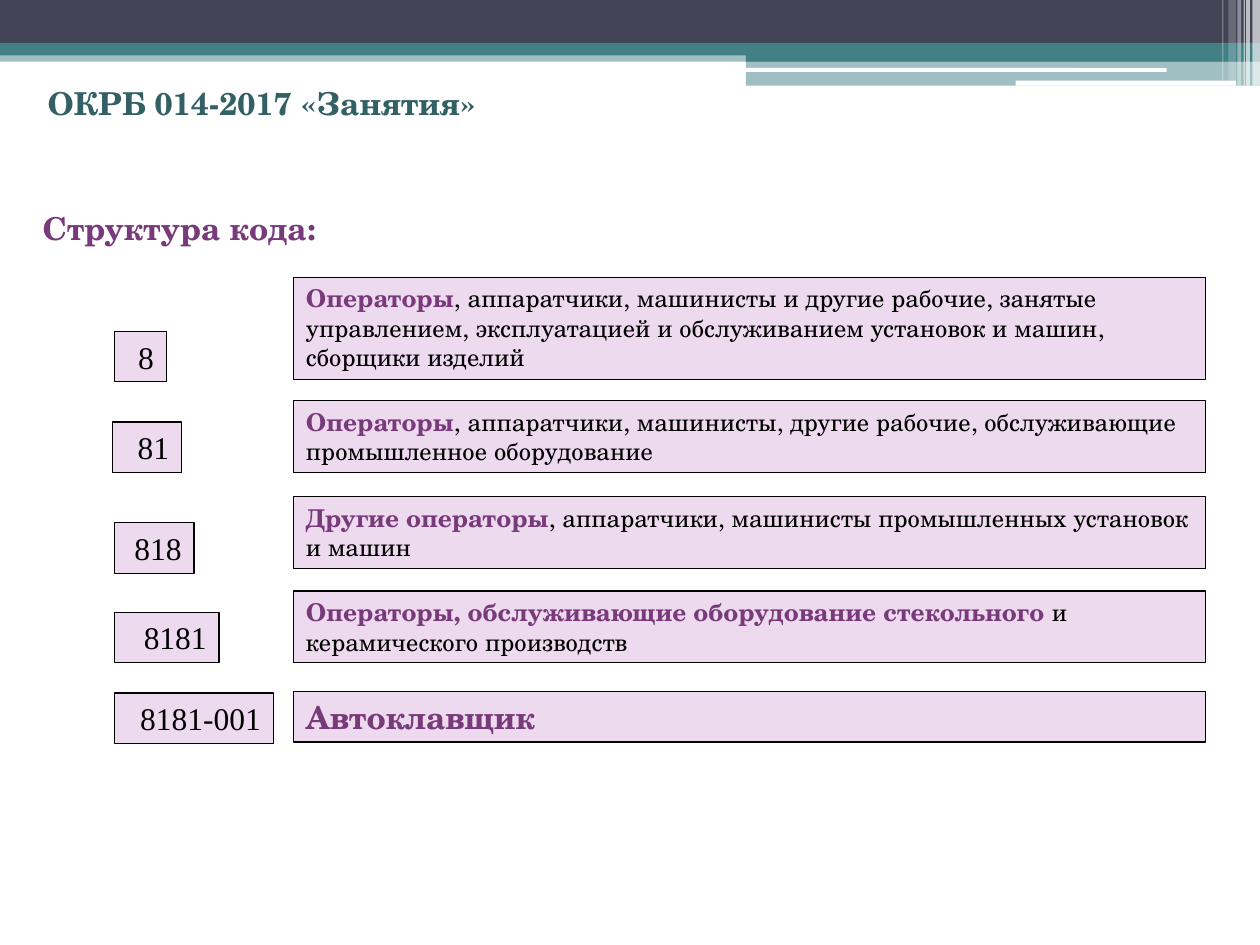
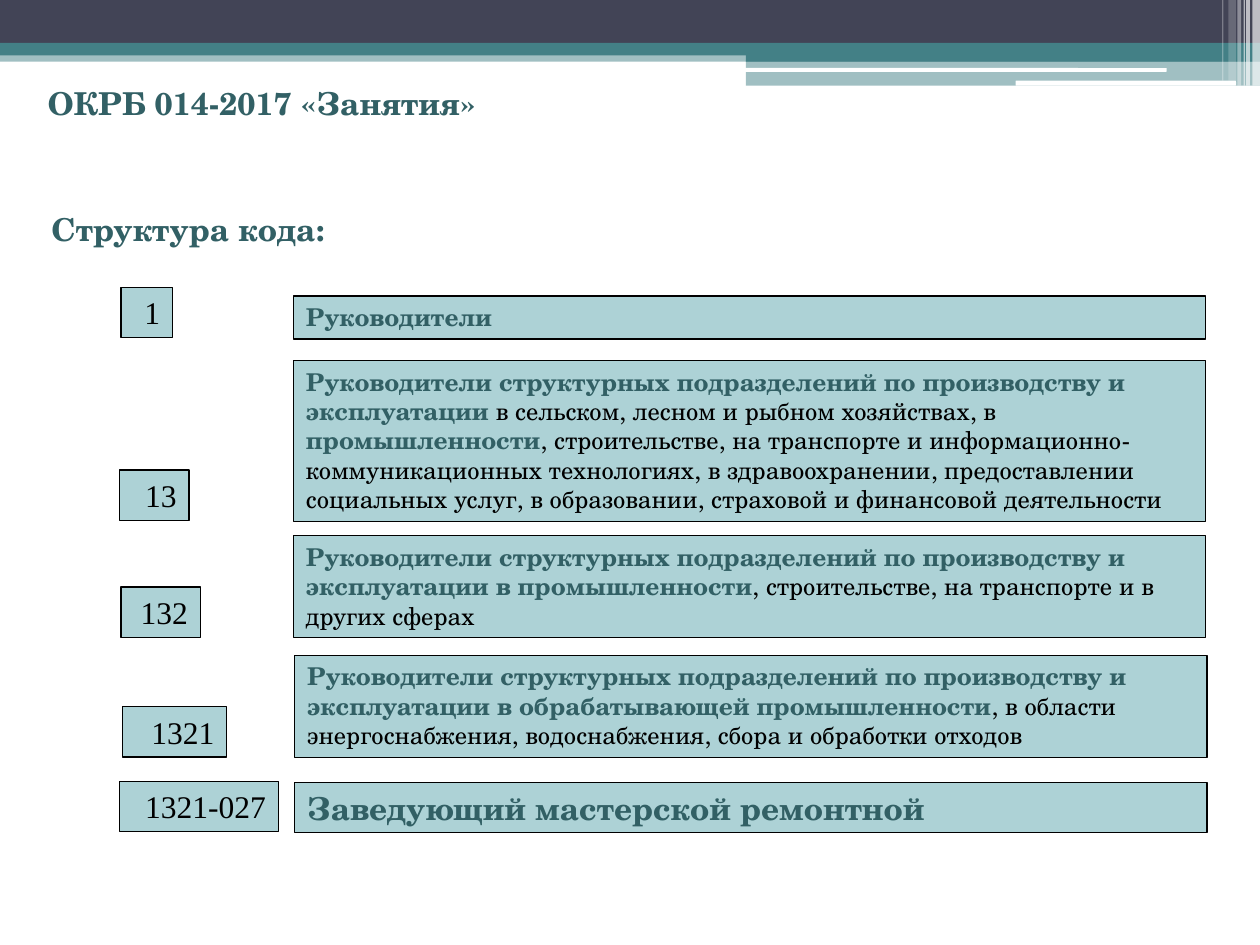
from dataclasses import dataclass
from typing import NamedTuple, Optional

import lxml.etree
import pptx
import pptx.dml.color
import pptx.enum.shapes
import pptx.enum.text
import pptx.oxml.ns
import pptx.util

Inches = pptx.util.Inches
Pt = pptx.util.Pt
FORM = pptx.enum.shapes.MSO_SHAPE
ALIGN = pptx.enum.text.PP_ALIGN

COLORS = {
    "dark": "424456",
    "teal": "438086",
    "white": "FFFFFF",
    "black": "000000",
    "deep": "326065",
    "aqua": "ADD2D6",
    "plum": "783A7A",
    "pink": "EDDAEE",
}
SERIF = "TeX Gyre Schola"
ROMAN = "Times New Roman"
FRAME = {
    "word_wrap": True,
    "auto_size": pptx.enum.text.MSO_AUTO_SIZE.NONE,
    "vertical_anchor": pptx.enum.text.MSO_ANCHOR.TOP,
    "margin_left": Inches(0.1),
    "margin_right": Inches(0.1),
    "margin_top": Inches(0.05),
    "margin_bottom": Inches(0.05),
}
TITLE = "*ОКРБ 014-2017 «Занятия»*"
HEAD = "*Структура кода:*"
TALL = 0.4
WIDE = 7.24
CODE_WIDTHS = {1: 0.41, 2: 0.55, 3: 0.63, 4: 0.83, 8: 1.26}


class Box(NamedTuple):
    left: float
    top: float
    width: float
    height: float


@dataclass
class Band:
    box: Box
    color: str
    alpha: int = 100
    form: int = FORM.RECTANGLE


@dataclass
class Style:
    """Text look; the accent colour marks bold words."""
    accent: str
    size: int = 14
    font: str = SERIF
    align: int = ALIGN.LEFT


@dataclass
class Level:
    """One step of the code: its digits and its meaning, bold between asterisks."""
    code: str
    code_left: float
    code_top: float
    text: str
    top: float
    height: float
    left: float = 2.33
    size: int = 14


@dataclass
class Page:
    accent: str
    fill: str
    head: Box
    levels: list[Level]


def stripe(left: float, width: float, height: float, alpha: int) -> Band:
    return Band(Box(left, 0, width, height), "white", alpha)


BANDS = [
    Band(Box(0, 0.4, 10, 0.09), "teal", 50),
    Band(Box(0, 0, 10, 0.34), "dark"),
    Band(Box(0, 0.34, 10, 0.1), "teal"),
    Band(Box(5.92, 0.39, 4.08, 0.1), "teal"),
    Band(Box(5.92, 0.48, 4.08, 0.2), "teal", 50),
    Band(Box(5.91, 0.54, 3.35, 0.03), "white", form=FORM.ROUNDED_RECTANGLE),
    Band(Box(8.06, 0.64, 1.75, 0.04), "white", form=FORM.ROUNDED_RECTANGLE),
    stripe(9.94, 0.06, 0.68, 65),
    stripe(9.89, 0.03, 0.68, 65),
    stripe(9.87, 0.01, 0.68, 60),
    stripe(9.82, 0.03, 0.68, 40),
    stripe(9.75, 0.06, 0.64, 20),
    stripe(9.7, 0.01, 0.64, 30),
]

PAGES = [
    Page("plum", "pink", Box(0.24, 1.61, 2.6, TALL), [
        Level("8", 0.91, 2.63,
              "*Операторы*, аппаратчики, машинисты и другие рабочие, занятые "
              "управлением, эксплуатацией и обслуживанием установок и машин, "
              "сборщики изделий", 2.2, 0.81),
        Level("81", 0.89, 3.35,
              "*Операторы*, аппаратчики, машинисты, другие рабочие, "
              "обслуживающие промышленное оборудование", 3.18, 0.57),
        Level("818", 0.91, 4.15,
              "*Другие операторы*, аппаратчики, машинисты промышленных "
              "установок и машин", 3.94, 0.57),
        Level("8181", 0.91, 4.86,
              "*Операторы, обслуживающие оборудование стекольного *"
              "и керамического производств", 4.69, 0.57),
        Level("8181-001", 0.91, 5.5, "*Автоклавщик*", 5.49, TALL, size=18),
    ]),
    Page("deep", "aqua", Box(0.31, 1.62, 2.6, TALL), [
        Level("1", 0.96, 2.28, "*Руководители*", 2.35, 0.34),
        Level("13", 0.95, 3.73,
              "*Руководители структурных подразделений по производству и "
              "эксплуатации *в сельском, лесном и рыбном хозяйствах, в "
              "*промышленности*, строительстве, на транспорте и "
              "информационно-коммуникационных технологиях, в здравоохранении, "
              "предоставлении социальных услуг, в образовании, страховой и "
              "финансовой деятельности", 2.86, 1.28),
        Level("132", 0.96, 4.66,
              "*Руководители структурных подразделений по производству и "
              "эксплуатации в промышленности*, строительстве, на транспорте "
              "и в других сферах", 4.25, 0.81),
        Level("1321", 0.97, 5.61,
              "*Руководители структурных подразделений по производству и "
              "эксплуатации в обрабатывающей промышленности*, в области "
              "энергоснабжения, водоснабжения, сбора и обработки отходов",
              5.2, 0.81, left=2.34),
        Level("1321-027", 0.95, 6.2, "*Заведующий мастерской ремонтной*",
              6.21, TALL, left=2.34, size=18),
    ]),
]


def rgb(name: str) -> pptx.dml.color.RGBColor:
    return pptx.dml.color.RGBColor.from_string(COLORS[name])


def place(box: Box) -> list[int]:
    return [Inches(side) for side in box]


def write(shape, text: str, style: Style) -> None:
    """Fill the shape with text; parts between asterisks are bold accents."""
    frame = shape.text_frame
    for name, value in FRAME.items():
        setattr(frame, name, value)
    line = frame.paragraphs[0]
    line.alignment = style.align
    for index, part in enumerate(text.split("*")):
        if not part:
            continue
        bold = index % 2 == 1
        run = line.add_run()
        run.text = part
        looks = {"name": style.font, "size": Pt(style.size), "bold": bold}
        for name, value in looks.items():
            setattr(run.font, name, value)
        run.font.color.rgb = rgb(style.accent if bold else "black")


def add_form(slide, box: Box, fill: str, edge: Optional[str] = None,
             form: int = FORM.RECTANGLE):
    shape = slide.shapes.add_shape(form, *place(box))
    shape.shadow.inherit = False
    shape.fill.solid()
    shape.fill.fore_color.rgb = rgb(fill)
    if edge:
        shape.line.color.rgb = rgb(edge)
        shape.line.width = Pt(0.75)
    else:
        shape.line.fill.background()
    return shape


def add_band(slide, band: Band) -> None:
    shape = add_form(slide, band.box, band.color, form=band.form)
    if band.alpha < 100:
        qn = pptx.oxml.ns.qn
        tint = next(shape.element.spPr.iter(qn("a:srgbClr")))
        lxml.etree.SubElement(tint, qn("a:alpha"), val=str(band.alpha * 1000))


def add_label(slide, box: Box, text: str, accent: str) -> None:
    write(slide.shapes.add_textbox(*place(box)), text, Style(accent, 18))


def add_level(slide, level: Level, page: Page) -> None:
    width = CODE_WIDTHS[len(level.code)]
    code = Box(level.code_left, level.code_top, width, TALL)
    note = Box(level.left, level.top, WIDE, level.height)
    write(add_form(slide, code, page.fill, "black"), level.code,
          Style(page.accent, 18, ROMAN, ALIGN.RIGHT))
    write(add_form(slide, note, page.fill, "black"), level.text,
          Style(page.accent, level.size))


def add_page(deck, page: Page) -> None:
    slide = deck.slides.add_slide(deck.slide_layouts[6])
    for band in BANDS:
        add_band(slide, band)
    add_label(slide, Box(0.28, 0.62, 3.98, TALL), TITLE, "deep")
    add_label(slide, page.head, HEAD, page.accent)
    for level in page.levels:
        add_level(slide, level, page)


def main() -> None:
    deck = pptx.Presentation()
    deck.slide_width = Inches(10)
    deck.slide_height = Inches(7.5)
    for page in PAGES:
        add_page(deck, page)
    deck.save("out.pptx")


if __name__ == "__main__":
    main()
